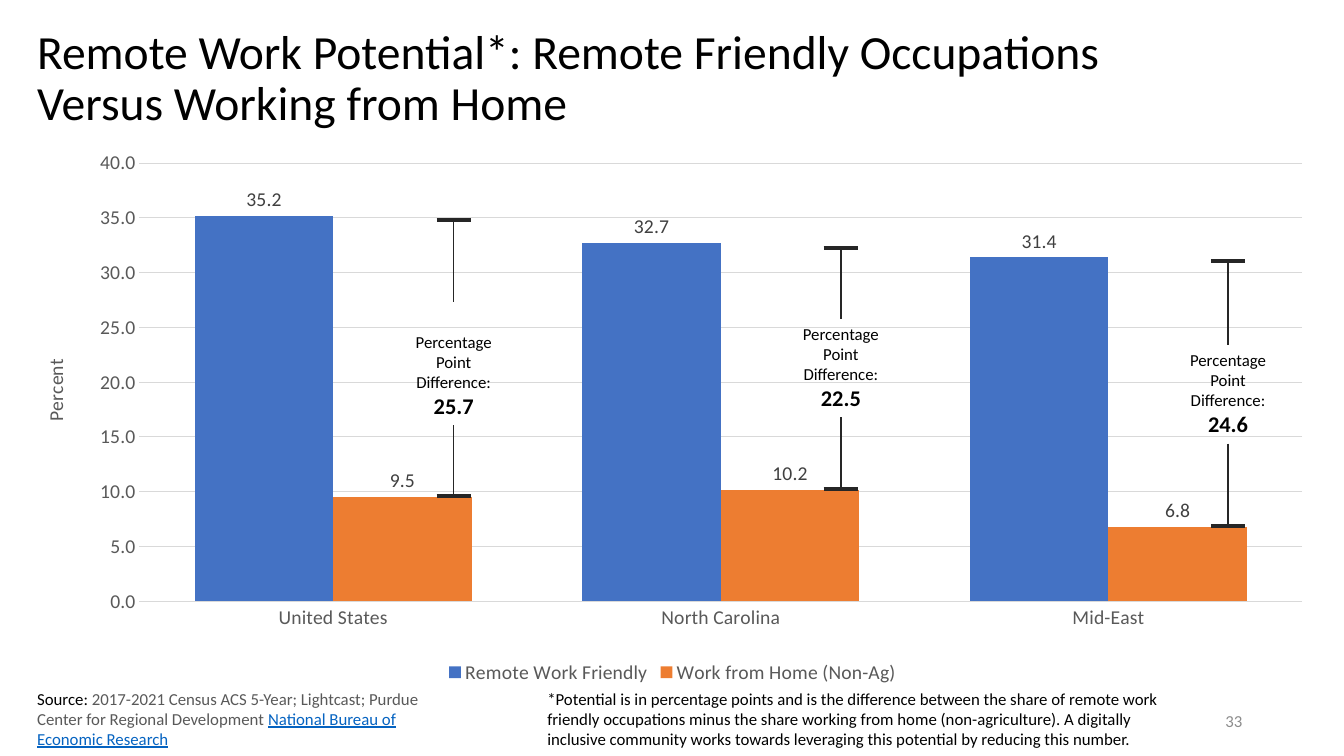
from copy import deepcopy

from lxml import etree
from pptx import Presentation
from pptx.chart.data import CategoryChartData
from pptx.dml.color import RGBColor
from pptx.enum.chart import XL_CHART_TYPE, XL_LABEL_POSITION, XL_LEGEND_POSITION, XL_TICK_MARK
from pptx.enum.shapes import MSO_CONNECTOR
from pptx.enum.text import MSO_ANCHOR, PP_ALIGN
from pptx.oxml.ns import qn
from pptx.util import Inches, Pt

COLUMNS = XL_CHART_TYPE.COLUMN_CLUSTERED
OUTSIDE_END = XL_LABEL_POSITION.OUTSIDE_END
LEGEND_BOTTOM = XL_LEGEND_POSITION.BOTTOM
NO_TICK = XL_TICK_MARK.NONE
STRAIGHT = MSO_CONNECTOR.STRAIGHT
TOP, MIDDLE = MSO_ANCHOR.TOP, MSO_ANCHOR.MIDDLE
LEFT, CENTER, RIGHT = PP_ALIGN.LEFT, PP_ALIGN.CENTER, PP_ALIGN.RIGHT
TOP_SIDE, BOTTOM_SIDE = 0, 2

FONT = "Calibri"
COLORS = {
    "text": "000000",
    "muted": "595959",
    "label": "404040",
    "number": "8C8C8C",
    "link": "0563C1",
    "grid": "D9D9D9",
    "bracket": "262626",
    "friendly": "4472C4",
    "home": "ED7D31",
}
REGIONS = ["United States", "North Carolina", "Mid-East"]
FRIENDLY = [35.2, 32.7, 31.4]
HOME = [9.5, 10.2, 6.8]
PLOT_LAYOUT = {"x": 0.087, "y": 0.035, "w": 0.901, "h": 0.805}
BRACKETS = [
    {"top": 2.18, "bottom": 4.92, "note": 3.24, "stem_end": 3.0},
    {"top": 2.46, "bottom": 4.85, "note": 3.16, "stem_end": None},
    {"top": 2.59, "bottom": 5.22, "note": 3.42, "stem_end": None},
]
FIRST_BRACKET, BRACKET_STEP = 4.5, 3.84
CAP_WIDTH = 0.34
NOTE_WIDTH, NOTE_HEIGHT = 1.31, 0.98


def color(name):
    return RGBColor.from_string(COLORS[name])


def style_font(font, size, name, bold=None):
    font.name = FONT
    font.size = Pt(size)
    font.bold = bold
    font.color.rgb = color(name)


def add_text(page, left, top, width, height, text, size, name, align=LEFT, anchor=TOP):
    box = page.shapes.add_textbox(Inches(left), Inches(top), Inches(width), Inches(height))
    frame = box.text_frame
    frame.word_wrap = True
    frame.vertical_anchor = anchor
    frame.text = text
    for para in frame.paragraphs:
        para.alignment = align
        for span in para.runs:
            style_font(span.font, size, name)
        for line_break in para._p.findall(qn("a:br")):
            line_break.append(deepcopy(para.runs[0]._r.rPr))
    return box


def add_line(page, start, end, weight):
    line = page.shapes.add_connector(STRAIGHT, *(Inches(value) for value in start + end))
    line.line.color.rgb = color("bracket")
    line.line.width = Pt(weight)
    etree.SubElement(line._element.spPr, qn("a:effectLst"))
    return line


def add_title(page, left, top, width, height):
    text = "Remote Work Potential*: Remote Friendly Occupations\vVersus Working from Home"
    box = add_text(page, left, top, width, height, text, 34, "text", anchor=MIDDLE)
    box.text_frame.paragraphs[0].line_spacing = 0.9


def set_plot_layout(chart):
    plot_area = chart._chartSpace.chart.plotArea
    for old in plot_area.findall(qn("c:layout")):
        plot_area.remove(old)
    layout = etree.Element(qn("c:layout"))
    manual = etree.SubElement(layout, qn("c:manualLayout"))
    settings = {"layoutTarget": "inner", "xMode": "edge", "yMode": "edge", **PLOT_LAYOUT}
    for tag, value in settings.items():
        etree.SubElement(manual, qn("c:" + tag)).set("val", str(value))
    plot_area.insert(0, layout)


def style_axes(chart):
    categories, values = chart.category_axis, chart.value_axis
    for axis in (categories, values):
        axis.major_tick_mark = NO_TICK
        axis.minor_tick_mark = NO_TICK
        style_font(axis.tick_labels.font, 14, "muted", False)
    categories.format.line.color.rgb = color("grid")
    categories.format.line.width = Pt(0.75)
    values.minimum_scale, values.maximum_scale, values.major_unit = 0, 40, 5
    values.tick_labels.number_format = "0.0"
    values.tick_labels.number_format_is_linked = False
    values.format.line.fill.background()
    values.major_gridlines.format.line.color.rgb = color("grid")
    values.major_gridlines.format.line.width = Pt(0.75)
    title = values.axis_title.text_frame
    title.text = "Percent"
    style_font(title.paragraphs[0].runs[0].font, 14, "muted", False)


def add_share_chart(page, left, top, width, height):
    data = CategoryChartData(number_format="0.0")
    data.categories = REGIONS
    data.add_series("Remote Work Friendly", FRIENDLY)
    data.add_series("Work from Home (Non-Ag)", HOME)
    chart = page.shapes.add_chart(
        COLUMNS, Inches(left), Inches(top), Inches(width), Inches(height), data
    ).chart
    style_font(chart.font, 14, "text")
    chart.has_title = False
    chart.has_legend = True
    chart.legend.position = LEGEND_BOTTOM
    chart.legend.include_in_layout = False
    style_font(chart.legend.font, 14, "muted")
    plot = chart.plots[0]
    plot.gap_width, plot.overlap = 80, 0
    plot.vary_by_categories = False
    for series, name in zip(plot.series, ("friendly", "home")):
        series.format.fill.solid()
        series.format.fill.fore_color.rgb = color(name)
        labels = series.data_labels
        labels.show_value = True
        labels.position = OUTSIDE_END
        labels.number_format = "0.0"
        labels.number_format_is_linked = False
        style_font(labels.font, 14, "label")
    style_axes(chart)
    set_plot_layout(chart)


def add_bracket(page, center, top, bottom, note, stem_end, difference):
    text = f"Percentage\vPoint\nDifference:\v{difference:.1f}"
    box = add_text(page, center - NOTE_WIDTH / 2, note, NOTE_WIDTH, NOTE_HEIGHT,
                   text, 12, "text", CENTER)
    style_font(box.text_frame.paragraphs[1].runs[1].font, 16, "text", True)
    for level in (bottom, top):
        add_line(page, (center - CAP_WIDTH / 2, level), (center + CAP_WIDTH / 2, level), 3)
    upper = add_line(page, (center, top), (center, stem_end or note), 1)
    if stem_end is None:
        upper.end_connect(box, TOP_SIDE)
    lower = add_line(page, (center, note + NOTE_HEIGHT), (center, bottom), 1)
    lower.begin_connect(box, BOTTOM_SIDE)


def add_source(page, left, top, width, height):
    box = add_text(page, left, top, width, height, "Source: ", 12, "text")
    para = box.text_frame.paragraphs[0]
    parts = [
        ("2017-2021 Census ACS 5-Year; Lightcast; Purdue Center for Regional Development ", "muted"),
        ("National Bureau of Economic Research", "link"),
    ]
    for text, name in parts:
        span = para.add_run()
        span.text = text
        style_font(span.font, 12, name)
        span.font.underline = name == "link"


def add_footnote(page, left, top, width, height):
    text = (
        "*Potential is in percentage points and is the difference between the share of "
        "remote work friendly occupations minus the share working from home "
        "(non-agriculture). A digitally inclusive community works towards leveraging "
        "this potential by reducing this number."
    )
    add_text(page, left, top, width, height, text, 12, "text")


def main():
    deck = Presentation()
    deck.slide_width, deck.slide_height = Inches(13.33), Inches(7.5)
    page = deck.slides.add_slide(deck.slide_layouts[6])
    add_title(page, 0.27, 0.15, 12.76, 1.28)
    add_text(page, 9.42, 6.95, 3, 0.4, "33", 12, "number", RIGHT, MIDDLE)
    add_share_chart(page, 0.27, 1.43, 12.8, 5.4)
    for index, bracket in enumerate(BRACKETS):
        add_bracket(page, FIRST_BRACKET + index * BRACKET_STEP,
                    difference=FRIENDLY[index] - HOME[index], **bracket)
    add_source(page, 0.27, 6.78, 4.4, 0.71)
    add_footnote(page, 5.33, 6.78, 6.54, 0.71)
    deck.save("out.pptx")


if __name__ == "__main__":
    main()
